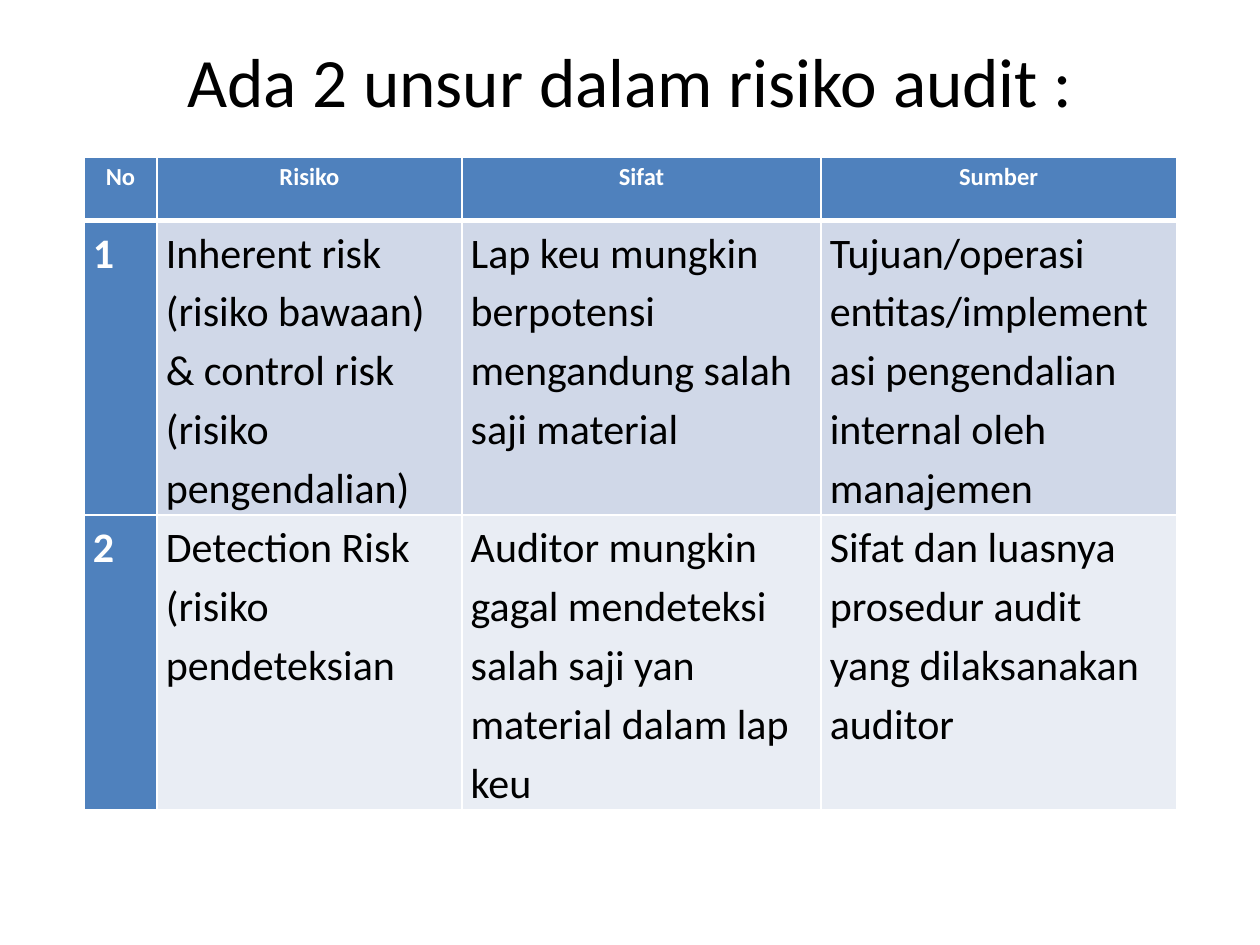
from dataclasses import dataclass

from lxml.etree import SubElement
from pptx import Presentation
from pptx.dml.color import RGBColor
from pptx.enum.text import MSO_ANCHOR, PP_ALIGN
from pptx.oxml.ns import qn
from pptx.util import Inches, Pt


@dataclass(frozen=True)
class Theme:
    font: str = "Calibri"
    title_size: float = 39.6
    header_size: float = 14
    body_size: float = 24
    ink: str = "000000"
    white: str = "FFFFFF"
    accent: str = "4F81BD"
    bands: tuple = ("D0D8E8", "E9EDF4")
    thin: float = 1
    thick: float = 3


THEME = Theme()
SLIDE_WIDTH, SLIDE_HEIGHT = Inches(10), Inches(7.5)
COLUMN_WIDTHS = (0.58, 2.42, 2.85, 2.82)
ROW_HEIGHTS = (0.5, 2.33, 2.33)
RISK_ROWS = (
    ("No", "Risiko", "Sifat", "Sumber"),
    (
        "1",
        "Inherent risk (risiko bawaan) & control risk (risiko pengendalian)",
        "Lap keu mungkin berpotensi mengandung salah saji material",
        "Tujuan/operasi entitas/implementasi pengendalian internal oleh manajemen",
    ),
    (
        "2",
        "Detection Risk (risiko pendeteksian",
        "Auditor mungkin gagal mendeteksi salah saji yan material dalam lap keu",
        "Sifat dan luasnya prosedur audit yang dilaksanakan auditor",
    ),
)


def write_text(text_frame, text, *, size, color, bold=False,
               align=PP_ALIGN.LEFT, line_spacing=None):
    paragraph = text_frame.paragraphs[0]
    paragraph.alignment = align
    paragraph.line_spacing = line_spacing
    run = paragraph.add_run()
    run.text = text
    run.font.name = THEME.font
    run.font.size = Pt(size)
    run.font.bold = bold
    run.font.color.rgb = RGBColor.from_string(color)


def set_borders(cell, bottom_width, top_width):
    properties = cell._tc.get_or_add_tcPr()
    widths = {"L": THEME.thin, "R": THEME.thin, "T": top_width, "B": bottom_width}
    for side, width in widths.items():
        line = SubElement(properties, qn(f"a:ln{side}"), w=str(Pt(width)))
        fill = SubElement(line, qn("a:solidFill"))
        SubElement(fill, qn("a:srgbClr"), val=THEME.white)


def add_title(slide, text, left, top, width, height):
    title = slide.shapes.title
    title.left, title.top, title.width, title.height = left, top, width, height
    text_frame = title.text_frame
    text_frame.word_wrap = True
    text_frame.vertical_anchor = MSO_ANCHOR.TOP
    text_frame.margin_top = 0
    write_text(text_frame, text, size=THEME.title_size, color=THEME.ink,
               align=PP_ALIGN.CENTER)


def format_cell(cell, text, row, column):
    is_header = row == 0
    is_accent = is_header or column == 0
    cell.margin_left = cell.margin_right = Inches(0.07)
    cell.margin_top = cell.margin_bottom = 0
    set_borders(
        cell,
        bottom_width=THEME.thick if is_header else THEME.thin,
        top_width=THEME.thick if row == 1 else THEME.thin,
    )
    cell.fill.solid()
    fill_color = THEME.accent if is_accent else THEME.bands[row - 1]
    cell.fill.fore_color.rgb = RGBColor.from_string(fill_color)
    write_text(
        cell.text_frame,
        text,
        size=THEME.header_size if is_header else THEME.body_size,
        color=THEME.white if is_accent else THEME.ink,
        bold=is_accent,
        align=PP_ALIGN.CENTER if is_header else PP_ALIGN.LEFT,
        line_spacing=1.15,
    )


def add_risk_table(slide, rows, left, top, width, height):
    table = slide.shapes.add_table(
        len(rows), len(COLUMN_WIDTHS), left, top, width, height
    ).table
    for column, share in zip(table.columns, COLUMN_WIDTHS):
        column.width = int(width * share / sum(COLUMN_WIDTHS))
    for row, share in zip(table.rows, ROW_HEIGHTS):
        row.height = int(height * share / sum(ROW_HEIGHTS))
    for row_index, texts in enumerate(rows):
        for column_index, text in enumerate(texts):
            format_cell(table.cell(row_index, column_index), text,
                        row_index, column_index)


def main():
    presentation = Presentation()
    presentation.slide_width = SLIDE_WIDTH
    presentation.slide_height = SLIDE_HEIGHT
    slide = presentation.slides.add_slide(presentation.slide_layouts[5])
    add_title(
        slide, "Ada 2 unsur dalam risiko audit :",
        left=int(SLIDE_WIDTH * 0.05), top=int(SLIDE_HEIGHT * 0.04),
        width=int(SLIDE_WIDTH * 0.9), height=int(SLIDE_HEIGHT / 6),
    )
    add_risk_table(
        slide, RISK_ROWS,
        left=int(SLIDE_WIDTH / 15), top=int(SLIDE_HEIGHT / 6),
        width=Inches(sum(COLUMN_WIDTHS)), height=Inches(sum(ROW_HEIGHTS)),
    )
    presentation.save("out.pptx")


if __name__ == "__main__":
    main()
